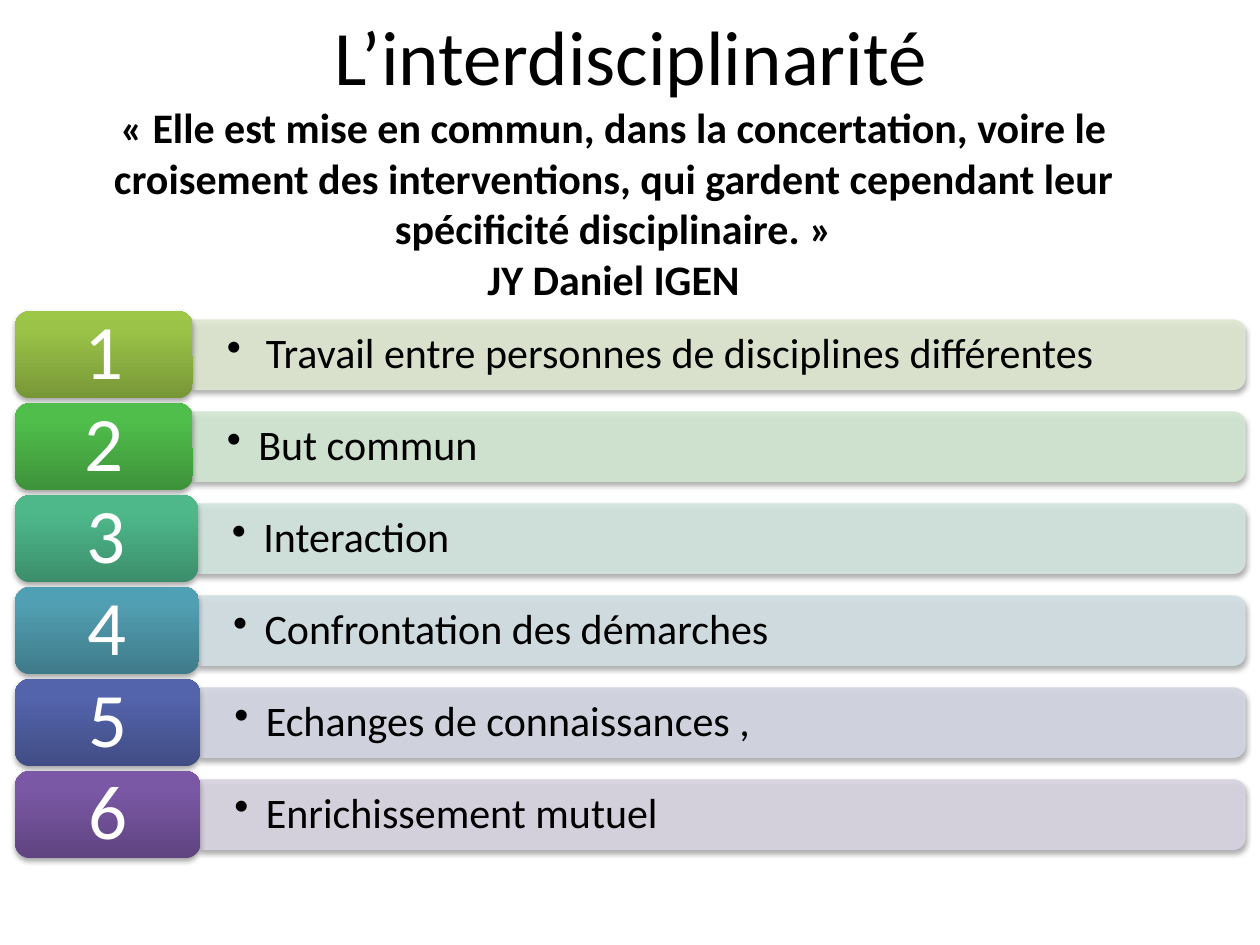
import copy

import pptx
import pptx.dml.color
import pptx.enum.shapes
import pptx.enum.text
import pptx.oxml
import pptx.oxml.ns
import pptx.util

Inches = pptx.util.Inches
Pt = pptx.util.Pt
Shape = pptx.enum.shapes.MSO_SHAPE
Align = pptx.enum.text.PP_ALIGN
Anchor = pptx.enum.text.MSO_ANCHOR
qn = pptx.oxml.ns.qn

HUES = {
    "ink": "000000",
    "white": "FFFFFF",
    "bars": ["DEE7D1", "D2E6D2", "D2E4DD", "D2DFE3", "D3D6E1", "D8D3E0"],
    "tiles": [
        ("779737", "9BC348", "9DC746"),
        ("3E923A", "50BE4B", "4FC149"),
        ("3C8E6B", "4EB88B", "4CBB8C"),
        ("3F7A89", "519FB2", "50A0B5"),
        ("414D85", "5464AC", "5363AF"),
        ("5F4480", "7B58A6", "7C57A8"),
    ],
}

# Text, tile width, hanging indent
ROWS = [
    ("Travail entre personnes de disciplines différentes", 1.41, 0.31),
    ("But commun", 1.41, 0.25),
    ("Interaction", 1.45, 0.25),
    ("Confrontation des démarches", 1.46, 0.25),
    ("Echanges de connaissances ,", 1.47, 0.25),
    ("Enrichissement mutuel", 1.47, 0.25),
]
LEFT, RIGHT, TOP = 0.12, 9.88, 2.47
STEP, TILE, BAR = 0.73, 0.69, 0.55

QUOTE = (
    "«\u00a0Elle est mise en commun, dans la concertation, voire le croisement "
    "des interventions, qui gardent cependant leur spécificité disciplinaire.\u00a0»"
)

SHADE = (
    '<a:outerShdw xmlns:a="http://schemas.openxmlformats.org/drawingml/2006/main" '
    'blurRad="40000" dist="23000" dir="5400000" rotWithShape="0">'
    '<a:srgbClr val="000000"><a:alpha val="35000"/></a:srgbClr></a:outerShdw>'
)


def rgb(hue):
    return pptx.dml.color.RGBColor.from_string(hue)


def apply(item, form):
    for name, value in form.items():
        setattr(item, name, value)


def write(shape, lines, size, hue="ink", bold=False, align=Align.CENTER, **form):
    """Fill a shape with paragraphs; form holds text frame settings."""
    frame = shape.text_frame
    apply(frame, {"word_wrap": True, **form})
    frame.text = "\n".join(lines)
    for para in frame.paragraphs:
        para.alignment = align
        apply(para.font, {"name": "Calibri", "size": Pt(size), "bold": bold})
        para.font.color.rgb = rgb(HUES[hue])
    return frame


def add_box(slide, place, lines, size, **form):
    box = slide.shapes.add_textbox(*map(Inches, place))
    return write(box, lines, size, **form)


def cast(shape):
    """Give the shape a soft shadow below it."""
    shape.shadow.inherit = False
    effects = shape._element.spPr.find(qn("a:effectLst"))
    effects.append(pptx.oxml.parse_xml(SHADE))


def fade(shape):
    """Make the fill and line of the shape slightly clear."""
    for color in shape._element.spPr.iter(qn("a:srgbClr")):
        color.append(color.makeelement(qn("a:alpha"), {"val": "90000"}))


def blend(shape, hues):
    """Fill upward through three colours."""
    fill = shape.fill
    fill.gradient()
    fill.gradient_angle = 90
    stops = shape._element.spPr.find(".//" + qn("a:gsLst"))
    stops.append(copy.deepcopy(stops[-1]))
    for stop, spot, hue in zip(fill.gradient_stops, (0, 0.8, 1), hues):
        stop.position = spot
        stop.color.rgb = rgb(hue)


def add_bar(slide, left, mid, hue):
    """Draw an upright bar turned so its round end points right."""
    span = RIGHT - left
    place = ((left + RIGHT - BAR) / 2, mid - span / 2, BAR, span)
    bar = slide.shapes.add_shape(Shape.ROUND_2_SAME_RECTANGLE, *map(Inches, place))
    bar.rotation = 90
    bar.fill.solid()
    bar.fill.fore_color.rgb = rgb(hue)
    bar.line.color.rgb = rgb(hue)
    bar.line.width = Pt(0.75)
    fade(bar)
    cast(bar)


def add_point(slide, left, mid, text, indent):
    form = {
        "margin_left": Inches(0.27), "margin_right": Inches(0.27),
        "margin_top": Inches(0.14), "margin_bottom": Inches(0.14),
        "vertical_anchor": Anchor.MIDDLE,
    }
    place = (left, mid - 0.25, RIGHT - left - 0.03, 0.5)
    frame = add_box(slide, place, [text], 24, align=Align.LEFT, **form)
    para = frame.paragraphs[0]
    apply(para, {"level": 1, "line_spacing": 0.9})
    props = para._p.get_or_add_pPr()
    props.set("marL", str(Inches(indent)))
    props.set("indent", str(-Inches(indent)))
    mark = props.makeelement(qn("a:buChar"), {"char": "•"})
    props.insert_element_before(mark, "a:tabLst", "a:defRPr", "a:extLst")


def add_tile(slide, top, width, label, hues):
    place = (LEFT, top, width, TILE)
    tile = slide.shapes.add_shape(Shape.ROUNDED_RECTANGLE, *map(Inches, place))
    blend(tile, hues)
    tile.line.fill.background()
    cast(tile)
    frame = write(tile, [label], 44, hue="white", vertical_anchor=Anchor.MIDDLE)
    frame.paragraphs[0].line_spacing = 0.9


def main():
    deck = pptx.Presentation()
    apply(deck, {"slide_width": Inches(10), "slide_height": Inches(7.5)})
    slide = deck.slides.add_slide(deck.slide_layouts[6])
    add_box(slide, (0.51, -0.19, 9, 1.25), ["L’interdisciplinarité"], 44,
            vertical_anchor=Anchor.MIDDLE)
    add_box(slide, (0.5, 0.76, 8.74, 1.72), [QUOTE, "JY Daniel IGEN"], 24, bold=True)
    for i, (text, width, indent) in enumerate(ROWS):
        top = TOP + i * STEP
        left, mid = LEFT + width, top + TILE / 2
        add_bar(slide, left, mid, HUES["bars"][i])
        add_point(slide, left, mid, text, indent)
        add_tile(slide, top, width, str(i + 1), HUES["tiles"][i])
    deck.save("out.pptx")


if __name__ == "__main__":
    main()
